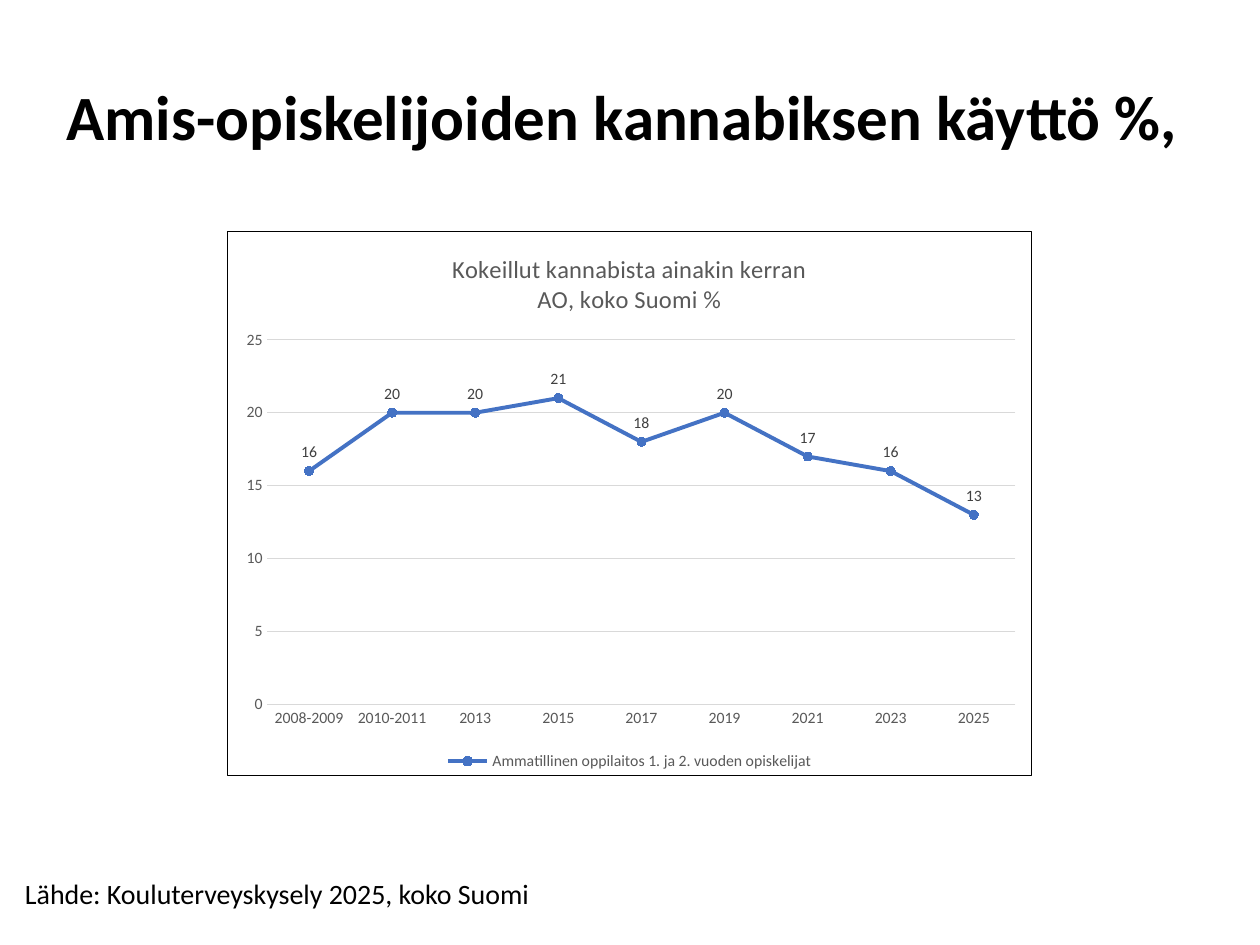
import pptx
import pptx.chart.data
import pptx.dml.color
import pptx.enum.chart
import pptx.enum.text
import pptx.oxml
import pptx.oxml.ns
import pptx.util

WIDTH, HEIGHT = pptx.util.Inches(10), pptx.util.Inches(7.5)
FONT = "Calibri"
COLORS = {"text": "000000", "muted": "595959", "label": "404040",
          "grid": "D9D9D9", "series": "4472C4", "paper": "FFFFFF"}
SERIES = "Ammatillinen oppilaitos 1. ja 2. vuoden opiskelijat"
USE_BY_YEAR = {"2008-2009": 16, "2010-2011": 20, "2013": 20, "2015": 21,
               "2017": 18, "2019": 20, "2021": 17, "2023": 16, "2025": 13}


def rgb(name):
    return pptx.dml.color.RGBColor.from_string(COLORS[name])


def share(x, y, w, h):
    """Turn shares of the slide into a box of lengths."""
    return int(x * WIDTH), int(y * HEIGHT), int(w * WIDTH), int(h * HEIGHT)


def style_font(font, size, color, bold=False):
    font.name, font.size, font.bold = FONT, pptx.util.Pt(size), bold
    font.color.rgb = rgb(color)


def style_line(line, color, width):
    line.color.rgb = rgb(color)
    line.width = pptx.util.Pt(width)


def add_text(s, box, text, size, bold=False, wrap=True, spacing=1.0):
    tf = s.shapes.add_textbox(*box).text_frame
    tf.word_wrap = wrap
    tf.vertical_anchor = pptx.enum.text.MSO_ANCHOR.MIDDLE
    p = tf.paragraphs[0]
    p.text = text
    p.line_spacing = spacing
    style_font(p.font, size, "text", bold)


def frame_chart(chart):
    """Give the chart area a fill and a thin border."""
    sp_pr = pptx.oxml.parse_xml(
        f'<c:spPr {pptx.oxml.ns.nsdecls("c", "a")}>'
        f'<a:solidFill><a:srgbClr val="{COLORS["paper"]}"/></a:solidFill>'
        f'<a:ln w="{pptx.util.Pt(0.5)}"><a:solidFill>'
        f'<a:srgbClr val="{COLORS["text"]}"/></a:solidFill></a:ln></c:spPr>')
    chart.element.find(pptx.oxml.ns.qn("c:txPr")).addprevious(sp_pr)


def place_plot(chart, **shares):
    """Fix the inner plot area at shares of the chart."""
    plot_area = chart.element.chart.plotArea
    for old in plot_area.findall(pptx.oxml.ns.qn("c:layout")):
        plot_area.remove(old)
    sizes = "".join(f'<c:{k} val="{v}"/>' for k, v in shares.items())
    plot_area.insert(0, pptx.oxml.parse_xml(
        f'<c:layout {pptx.oxml.ns.nsdecls("c")}><c:manualLayout>'
        '<c:layoutTarget val="inner"/><c:xMode val="edge"/>'
        f'<c:yMode val="edge"/>{sizes}</c:manualLayout></c:layout>'))


def style_axes(chart):
    for axis in (chart.category_axis, chart.value_axis):
        axis.major_tick_mark = pptx.enum.chart.XL_TICK_MARK.NONE
        axis.minor_tick_mark = pptx.enum.chart.XL_TICK_MARK.NONE
        style_font(axis.tick_labels.font, 9, "muted")
    style_line(chart.category_axis.format.line, "grid", 0.75)
    values = chart.value_axis
    values.minimum_scale, values.maximum_scale, values.major_unit = 0, 25, 5
    values.format.line.fill.background()
    style_line(values.major_gridlines.format.line, "grid", 0.75)


def style_series(plot):
    series = plot.series[0]
    series.smooth = False
    style_line(series.format.line, "series", 2.25)
    marker = series.marker
    marker.style, marker.size = pptx.enum.chart.XL_MARKER_STYLE.CIRCLE, 5
    marker.format.fill.solid()
    marker.format.fill.fore_color.rgb = rgb("series")
    style_line(marker.format.line, "series", 0.75)
    labels = series.data_labels
    labels.show_value = True
    labels.position = pptx.enum.chart.XL_LABEL_POSITION.ABOVE
    labels.number_format, labels.number_format_is_linked = "0", False
    style_font(labels.font, 9, "label")


def add_use_chart(s, box):
    data = pptx.chart.data.CategoryChartData(number_format="0")
    data.categories = list(USE_BY_YEAR)
    data.add_series(SERIES, list(USE_BY_YEAR.values()))
    chart = s.shapes.add_chart(
        pptx.enum.chart.XL_CHART_TYPE.LINE_MARKERS_STACKED, *box, data).chart
    style_font(chart.font, 10, "text")
    frame_chart(chart)
    place_plot(chart, x=0.05, y=0.2, w=0.93, h=0.67)

    chart.has_title = True
    tf = chart.chart_title.text_frame
    tf.text = "Kokeillut kannabista ainakin kerran\nAO, koko Suomi %"
    for p in tf.paragraphs:
        style_font(p.font, 14, "muted")

    chart.has_legend = True
    chart.legend.position = pptx.enum.chart.XL_LEGEND_POSITION.BOTTOM
    chart.legend.include_in_layout = False
    style_font(chart.legend.font, 9, "muted")
    style_axes(chart)
    chart.plots[0].vary_by_categories = False
    style_series(chart.plots[0])


def main():
    prs = pptx.Presentation()
    prs.slide_width, prs.slide_height = WIDTH, HEIGHT
    s = prs.slides.add_slide(prs.slide_layouts[6])
    add_text(s, share(0.043, 0.06, 0.927, 0.135),
             "Amis-opiskelijoiden kannabiksen käyttö %,", 36,
             bold=True, spacing=0.9)
    add_use_chart(s, share(0.18, 0.244, 0.639, 0.577))
    add_text(s, share(0.01, 0.921, 0.437, 0.049),
             "Lähde: Kouluterveyskysely 2025, koko Suomi", 16, wrap=False)
    prs.save("out.pptx")


if __name__ == "__main__":
    main()
